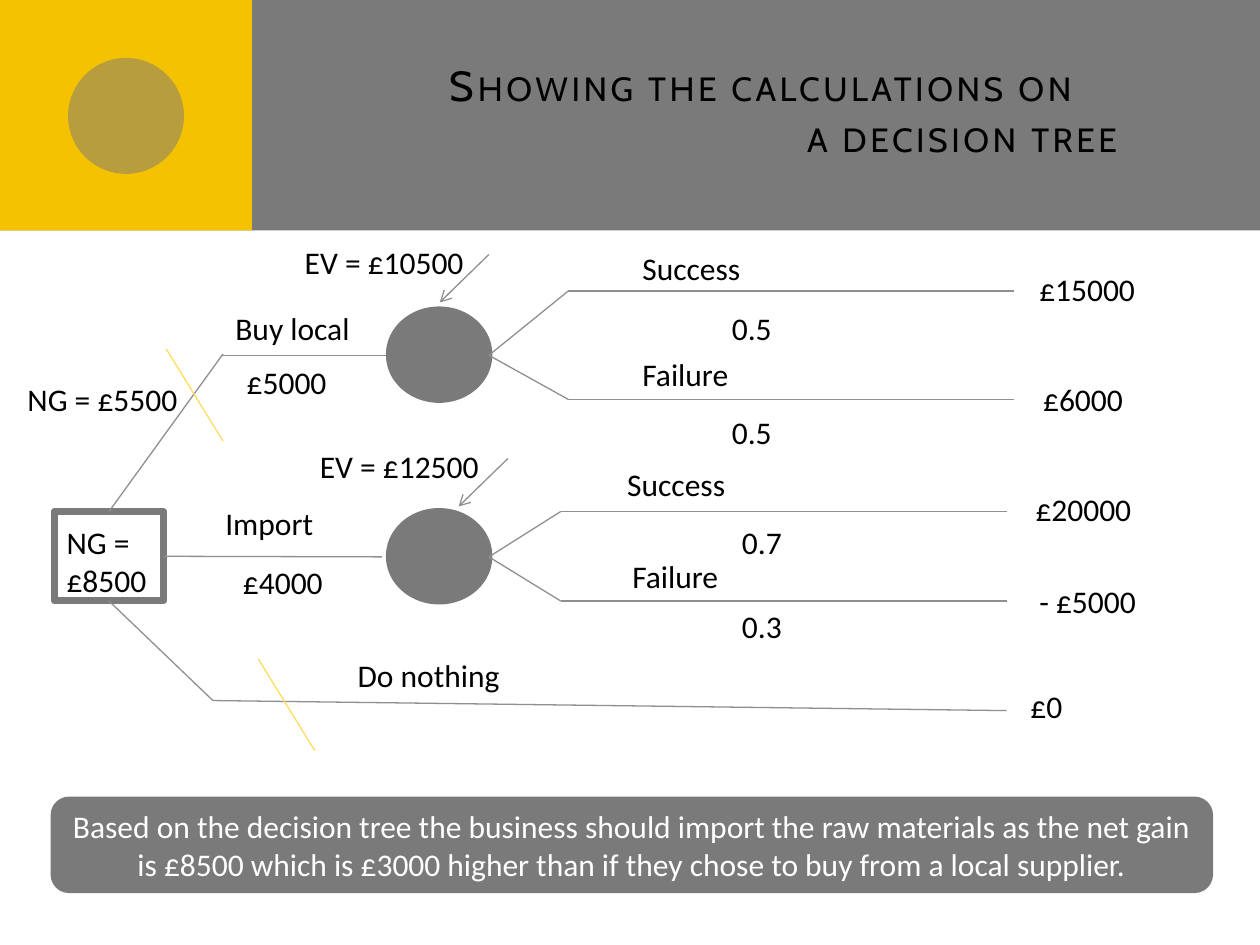
from lxml import etree
from pptx import Presentation, util as u
from pptx.dml.color import RGBColor
from pptx.enum import shapes, text
from pptx.oxml.ns import qn

GREY = RGBColor(0x7A, 0x7A, 0x7A)
BRANCH = RGBColor(0x8F, 0x8F, 0x8F)
GOLD = RGBColor(0xF5, 0xC2, 0x01)
CUT = RGBColor(0xFE, 0xDD, 0x61)
BLACK = RGBColor(0, 0, 0)
WHITE = RGBColor(0xFF, 0xFF, 0xFF)
COLUMNS, ROWS = 100, 75
RECT = shapes.MSO_SHAPE.RECTANGLE
OVAL = shapes.MSO_SHAPE.OVAL
ROUNDED = shapes.MSO_SHAPE.ROUNDED_RECTANGLE
TOP, BOTTOM, RIGHT = 0, 2, 3


class TreePage:
    body = {"name": "Calibri", "size": u.Pt(18)}
    heading = {"name": "Cabin", "size": u.Pt(24)}

    def __init__(self, deck):
        self.page = deck.slides.add_slide(deck.slide_layouts[6])
        self.column = deck.slide_width / COLUMNS
        self.row = deck.slide_height / ROWS

    def place(self, *cells):
        units = (self.column, self.row) * 2
        return [round(cell * unit) for cell, unit in zip(cells, units)]

    def shape(self, kind, cells, fill, outline=None, alpha=None):
        shape = self.page.shapes.add_shape(kind, *self.place(*cells))
        shape.shadow.inherit = False
        shape.fill.solid()
        shape.fill.fore_color.rgb = fill
        if outline is None:
            shape.line.fill.background()
        else:
            shape.line.color.rgb = outline
            shape.line.width = u.Pt(4)
        if alpha:
            color = shape.fill._xPr.find(".//" + qn("a:srgbClr"))
            etree.SubElement(color, qn("a:alpha"), val=str(alpha * 1000))
        return shape

    def set_words(self, shape, words, color=BLACK, align=text.PP_ALIGN.LEFT,
                  anchor=text.MSO_ANCHOR.TOP, style=None):
        frame = shape.text_frame
        frame.word_wrap = True
        frame.vertical_anchor = anchor
        para = frame.paragraphs[0]
        para.text = words
        para.alignment = align
        for span in para.runs:
            for key, value in (style or self.body).items():
                setattr(span.font, key, value)
            span.font.color.rgb = color
        return para

    def label(self, words, left, top, width, height=4, **options):
        box = self.page.shapes.add_textbox(*self.place(left, top, width, height))
        return self.set_words(box, words, **options)

    def title(self, words, cells):
        para = self.label(words, *cells, align=text.PP_ALIGN.RIGHT,
                          anchor=text.MSO_ANCHOR.MIDDLE, style=self.heading)
        for span in para.runs:
            properties = span.font._element
            properties.set("cap", "small")
            properties.set("spc", "200")

    def line(self, start, end, color=BRANCH, arrow=False, join=None):
        line = self.page.shapes.add_connector(
            shapes.MSO_CONNECTOR.STRAIGHT, *self.place(*start, *end))
        if join:
            line.begin_connect(*join)
        line.line.color.rgb = color
        line.line.width = u.Pt(0.75)
        if arrow:
            etree.SubElement(line.line._get_or_add_ln(), qn("a:tailEnd"), type="arrow")
        etree.SubElement(line._element.spPr, qn("a:effectLst"))

    def chance(self, top, fork, end, upper, lower):
        self.shape(OVAL, (30.9, top, 7.9, 7.1), GREY, GREY)
        for level in (upper, lower):
            self.line((38.8, top + 3.6), (fork, level))
            self.line((fork, level), (end, level))


def main():
    deck = Presentation()
    deck.slide_width, deck.slide_height = u.Inches(10), u.Inches(7.5)
    tree = TreePage(deck)

    tree.shape(RECT, (0, 0, 100, 18.3), GREY)
    tree.shape(RECT, (0, 0, 20, 18.3), GOLD)
    tree.shape(OVAL, (5.4, 4.6, 9.2, 9.2), GREY, alpha=50)
    tree.title("Showing the calculations on \va decision tree ", (26.7, 2.5, 68.3, 12.5))

    choice = tree.shape(RECT, (4.3, 40.6, 8.7, 7.1), WHITE, GREY)
    tree.line((8.7, 40.6), (17.7, 28.1), join=(choice, TOP))
    tree.line((17.5, 28.2), (30.9, 28.2))
    tree.line((13, 44.2), (30.3, 44.2), join=(choice, RIGHT))
    tree.line((8.7, 47.7), (16.9, 55.6), join=(choice, BOTTOM))
    tree.line((16.9, 55.6), (79.9, 56.4))
    tree.chance(24.6, 45.1, 80.5, 23.1, 31.7)
    tree.chance(40.6, 44.5, 79.9, 40.6, 47.7)

    for words, left, top, width in (
        ("Buy local", 17.7, 24, 15),
        ("£5000", 18.6, 28.3, 12.6),
        ("Import", 16.9, 39.5, 14.2),
        ("£4000", 18.3, 44.2, 10.5),
        ("Do nothing", 27.4, 51.6, 13.4),
        ("Success", 50, 19.3, 23.6),
        ("0.5", 57.1, 24, 7.1),
        ("Failure", 50, 27.7, 15.7),
        ("0.5", 57.1, 32.3, 7.1),
        ("Success", 48.8, 36.4, 23.6),
        ("0.7", 57.9, 41, 7.1),
        ("Failure", 49.2, 43.7, 15.7),
        ("0.3", 57.9, 47.7, 7.1),
        ("£15000", 81.5, 20.9, 14.2),
        ("£6000", 81.8, 29.7, 14.2),
        ("£20000", 81.2, 38.4, 14.2),
        ("- £5000", 81.5, 45.7, 14.2),
        ("£0", 80.8, 54, 14.2),
        ("EV = £10500", 23.2, 18.8, 19.3),
        ("EV = £12500", 24.4, 35, 19.3),
        ("NG = £5500", 1.2, 29.7, 19.3),
        ("NG = £8500", 4.3, 41, 8.7),
    ):
        tree.label(words, left, top, width)

    for left, top in ((38.8, 20.2), (40.3, 36.4)):
        tree.line((left, top), (left - 3.9, top + 3.8), arrow=True)
    for left, top in ((13.2, 27.7), (20.5, 52.3)):
        tree.line((left, top), (left + 4.5, top + 7.3), CUT)

    advice = tree.shape(ROUNDED, (4.3, 63.5, 91.7, 7.1), GREY, GREY)
    tree.set_words(advice, "Based on the decision tree the business should import the raw "
                   "materials as the net gain is £8500 which is £3000 higher than if they "
                   "chose to buy from a local supplier.", WHITE, text.PP_ALIGN.CENTER,
                   text.MSO_ANCHOR.MIDDLE)
    deck.save("out.pptx")


if __name__ == "__main__":
    main()
